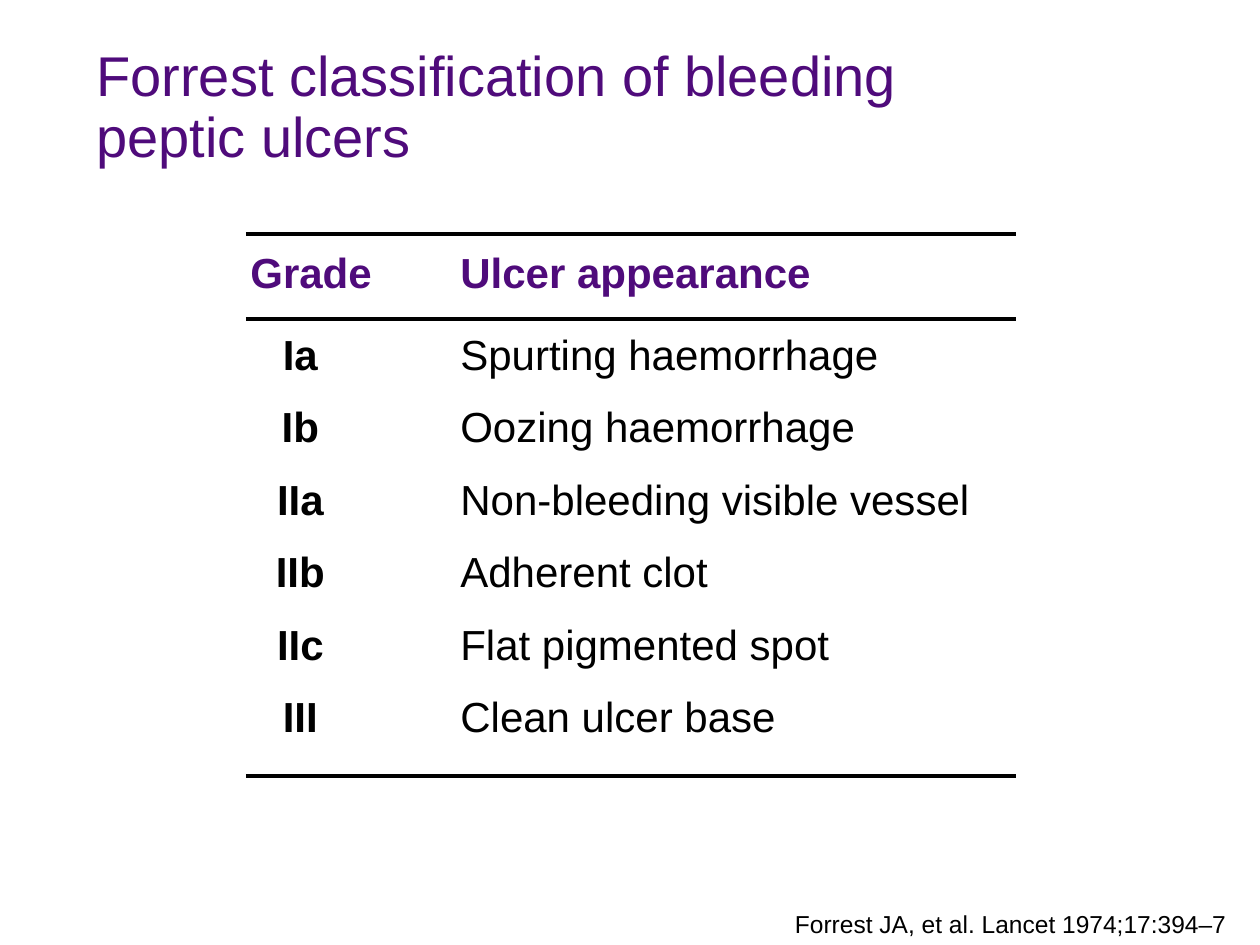
from lxml.etree import SubElement
from pptx import Presentation
from pptx.dml.color import RGBColor
from pptx.enum.shapes import MSO_CONNECTOR
from pptx.enum.text import MSO_ANCHOR, MSO_AUTO_SIZE, PP_ALIGN
from pptx.oxml.ns import qn
from pptx.util import Pt

SCALE = 914400 // 126
PURPLE, BLACK = "4F0B7B", "000000"


def px(n):
    return n * SCALE


def color(code):
    return RGBColor.from_string(code)


def assign(item, values):
    for name, value in values.items():
        setattr(item, name, value)


class Page:
    font = "Arial"
    tabs = ((50, "ctr"), (210, "l"))

    def __init__(self, deck):
        self.slide = deck.slides.add_slide(deck.slide_layouts[6])

    def box(self, place, **frame):
        text = self.slide.shapes.add_textbox(*map(px, place)).text_frame
        assign(text, {"word_wrap": True, **frame})
        return text

    def style(self, part, size, code, bold=False):
        assign(part.font, {"name": self.font, "size": Pt(size), "bold": bold})
        part.font.color.rgb = color(code)

    def text(self, place, words, size, code, para, **frame):
        line = self.box(place, **frame).paragraphs[0]
        line.text = words
        assign(line, para)
        for run in line.runs:
            self.style(run, size, code)

    def rows(self, place, rows):
        """Each row is a list of (words, colour, bold) runs set on tab stops."""
        frame = self.box(place, word_wrap=False,
                         auto_size=MSO_AUTO_SIZE.SHAPE_TO_FIT_TEXT)
        for i, row in enumerate(rows):
            line = frame.add_paragraph() if i else frame.paragraphs[0]
            assign(line, {"line_spacing": 0.9, "space_after": Pt(15.5)})
            stops = SubElement(line._p.get_or_add_pPr(), qn("a:tabLst"))
            for pos, kind in self.tabs:
                SubElement(stops, qn("a:tab"), pos=str(px(pos)), algn=kind)
            for words, code, bold in row:
                run = line.add_run()
                run.text = "\t" + words
                self.style(run, 24, code, bold)

    def rule(self, left, right, y):
        rule = self.slide.shapes.add_connector(
            MSO_CONNECTOR.STRAIGHT, px(left), px(y), px(right), px(y))
        rule.line.color.rgb = color(BLACK)
        rule.line.width = Pt(2.25)
        SubElement(rule._element.spPr, qn("a:effectLst"))


def main():
    deck = Presentation()
    assign(deck, {"slide_width": px(1260), "slide_height": px(945)})
    page = Page(deck)

    # Title
    page.text((84, 42, 1176, 158),
              "Forrest classification of bleeding\vpeptic ulcers",
              32, PURPLE, {"line_spacing": 0.9})

    # Grades and ulcer appearance
    page.rows((238, 246, 586, 58),
              [[("Grade", PURPLE, True), ("Ulcer appearance", PURPLE, True)]])
    grades = {
        "Ia": "Spurting haemorrhage",
        "Ib": "Oozing haemorrhage",
        "IIa": "Non-bleeding visible vessel",
        "IIb": "Adherent clot",
        "IIc": "Flat pigmented spot",
        "III": "Clean ulcer base",
    }
    page.rows((238, 328, 745, 435),
              [[(grade, BLACK, True), (look, BLACK, False)]
               for grade, look in grades.items()])

    # Rules
    for y in (234, 319, 776):
        page.rule(246, 1016, y)

    # Source
    page.text((43, 906, 1196, 39), "Forrest JA, et al. Lancet 1974;17:394–7",
              14, BLACK, {"line_spacing": 0.9, "alignment": PP_ALIGN.RIGHT},
              vertical_anchor=MSO_ANCHOR.BOTTOM,
              auto_size=MSO_AUTO_SIZE.SHAPE_TO_FIT_TEXT)

    deck.save("out.pptx")


if __name__ == "__main__":
    main()
